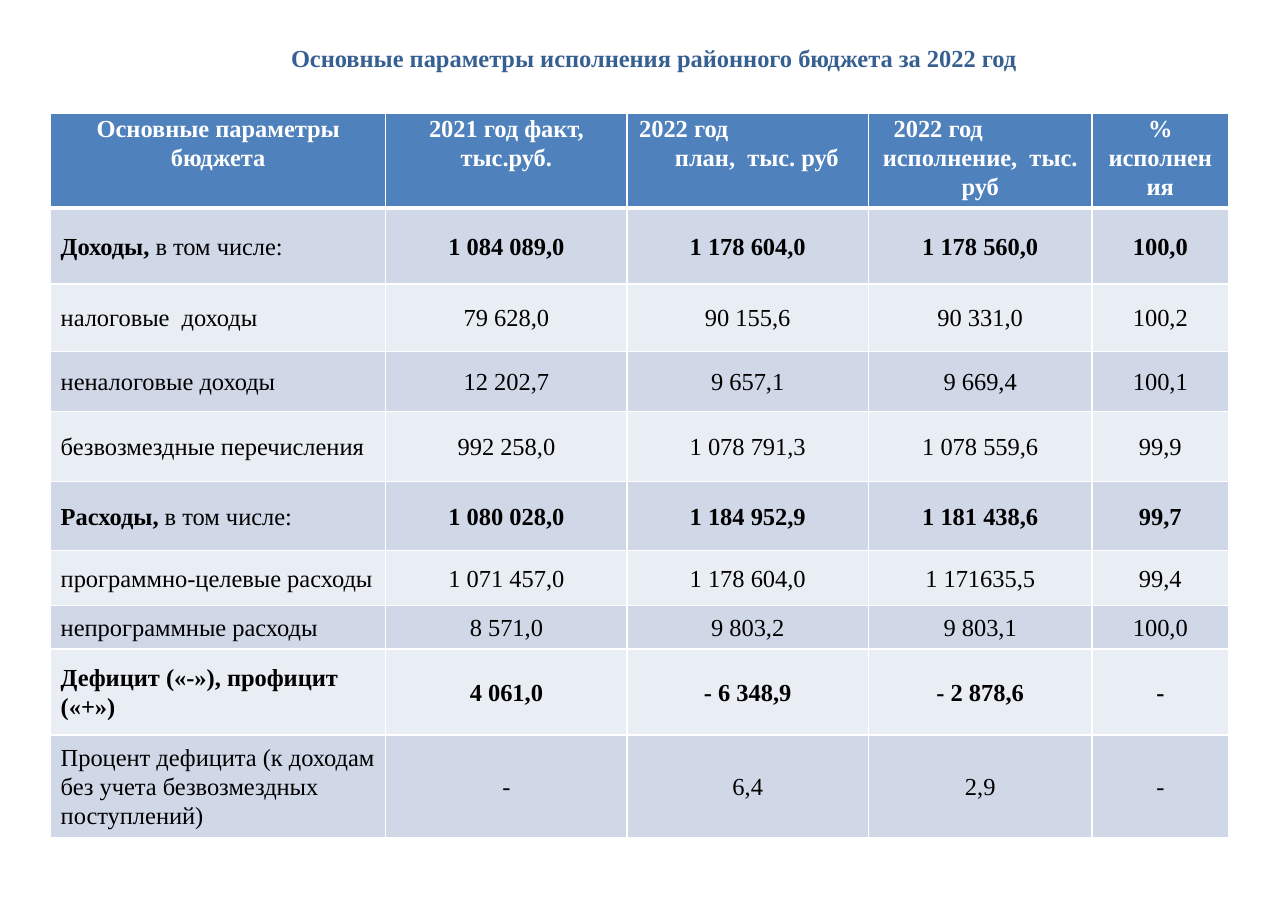
from lxml import etree
from pptx import Presentation
from pptx.dml.color import RGBColor
from pptx.enum.text import MSO_ANCHOR, PP_ALIGN
from pptx.oxml.ns import qn
from pptx.util import Pt

LEFT, MID = PP_ALIGN.LEFT, PP_ALIGN.CENTER
TOP, CENTER = MSO_ANCHOR.TOP, MSO_ANCHOR.MIDDLE

WHITE = RGBColor(0xFF, 0xFF, 0xFF)
BLACK = RGBColor(0x00, 0x00, 0x00)
NAVY = RGBColor(0x37, 0x60, 0x92)
BLUE = RGBColor(0x4F, 0x81, 0xBD)
BANDS = (RGBColor(0xE9, 0xED, 0xF4), RGBColor(0xD0, 0xD8, 0xE8))

TITLE = "Основные параметры исполнения районного бюджета за 2022 год"
WIDTHS = (218.9, 157.7, 157.7, 146.2, 89.2)
HEIGHTS = (59, 49.6, 44, 39.6, 45.4, 45.4, 36, 28.2, 56.4, 67)

HEADS = (
    (("Основные параметры бюджета", MID, 0),),
    (("2021 год факт, тыс.руб.", MID, 0),),
    (("2022 год", LEFT, 1.4), ("план,  тыс. руб", MID, 12)),
    (("2022 год", LEFT, 10), ("исполнение,  тыс. руб", MID, 0)),
    (("% исполнения", MID, 0),),
)
ROWS = (
    ("Доходы, ", "в том числе:", "1 084 089,0", "1 178 604,0", "1 178 560,0", "100,0"),
    ("", "налоговые  доходы", "79 628,0", "90 155,6", "90 331,0", "100,2"),
    ("", "неналоговые доходы", "12 202,7", "9 657,1", "9 669,4", "100,1"),
    ("", "безвозмездные перечисления", "992 258,0", "1 078 791,3", "1 078 559,6", "99,9"),
    ("Расходы,", " в том числе:", "1 080 028,0", "1 184 952,9", "1 181 438,6", "99,7"),
    ("", "программно-целевые расходы", "1 071 457,0", "1 178 604,0", "1 171635,5", "99,4"),
    ("", "непрограммные расходы", "8 571,0", "9 803,2", "9 803,1", "100,0"),
    ("Дефицит («-»), профицит («+»)", "", "4 061,0", "- 6 348,9", "- 2 878,6", "-"),
    ("", "Процент дефицита (к доходам без учета безвозмездных поступлений)",
     "-", "6,4", "2,9", "-"),
)


class Page:
    """Draws styled text and table cells on one slide."""

    def __init__(self, slide, font, size):
        self.slide, self.font, self.size = slide, font, size

    def run(self, para, text, color, bold):
        run = para.add_run()
        run.text = text
        run.font.name = self.font
        run.font.size = Pt(self.size)
        run.font.bold = bold
        run.font.color.rgb = color

    def para(self, frame, first, align, runs, color, indent=0):
        para = frame.paragraphs[0] if first else frame.add_paragraph()
        para.alignment = align
        para.line_spacing = 1.07
        if indent:
            para._p.get_or_add_pPr().set("marL", str(Pt(indent)))
        for text, bold in runs:
            if text:
                self.run(para, text, color, bold)

    def title(self, text, x, y, w, h):
        frame = self.slide.shapes.add_textbox(Pt(x), Pt(y), Pt(w), Pt(h)).text_frame
        frame.word_wrap = True
        para = frame.paragraphs[0]
        para.alignment = MID
        self.run(para, text, NAVY, True)

    def table(self, x, y, widths, heights):
        table = self.slide.shapes.add_table(
            len(heights), len(widths), Pt(x), Pt(y),
            Pt(sum(widths)), Pt(sum(heights))).table
        for col, w in zip(table.columns, widths):
            col.width = Pt(w)
        for row, h in zip(table.rows, heights):
            row.height = Pt(h)
        return table

    def cell(self, cell, fill, anchor, top=1, bottom=1):
        cell.fill.solid()
        cell.fill.fore_color.rgb = fill
        cell.vertical_anchor = anchor
        cell.margin_left = cell.margin_right = Pt(6.5)
        cell.margin_top = cell.margin_bottom = 0
        props = cell._tc.get_or_add_tcPr()
        sides = (("L", 1), ("R", 1), ("T", top), ("B", bottom))
        for spot, (side, width) in enumerate(sides):
            line = etree.Element(qn("a:ln" + side), w=str(Pt(width)))
            solid = etree.SubElement(line, qn("a:solidFill"))
            etree.SubElement(solid, qn("a:srgbClr"), val=str(WHITE))
            props.insert(spot, line)
        return cell.text_frame


def main():
    deck = Presentation()
    deck.slide_width, deck.slide_height = Pt(841.68), Pt(595.44)
    page = Page(deck.slides.add_slide(deck.slide_layouts[6]), "Times New Roman", 16)
    page.title(TITLE, 72, 24.5, 710.6, 26.6)
    table = page.table(33.2, 74.4, WIDTHS, HEIGHTS)

    for c, lines in enumerate(HEADS):
        frame = page.cell(table.cell(0, c), BLUE, TOP, bottom=3)
        for n, (text, align, indent) in enumerate(lines):
            page.para(frame, n == 0, align, [(text, True)], WHITE, indent)

    for r, (strong, plain, *values) in enumerate(ROWS, 1):
        label = [(strong, True), (plain, False)]
        for c, runs in enumerate([label] + [[(v, bool(strong))] for v in values]):
            frame = page.cell(table.cell(r, c), BANDS[r % 2], CENTER,
                              top=3 if r == 1 else 1)
            page.para(frame, True, MID if c else LEFT, runs, BLACK)

    deck.save("out.pptx")


if __name__ == "__main__":
    main()
